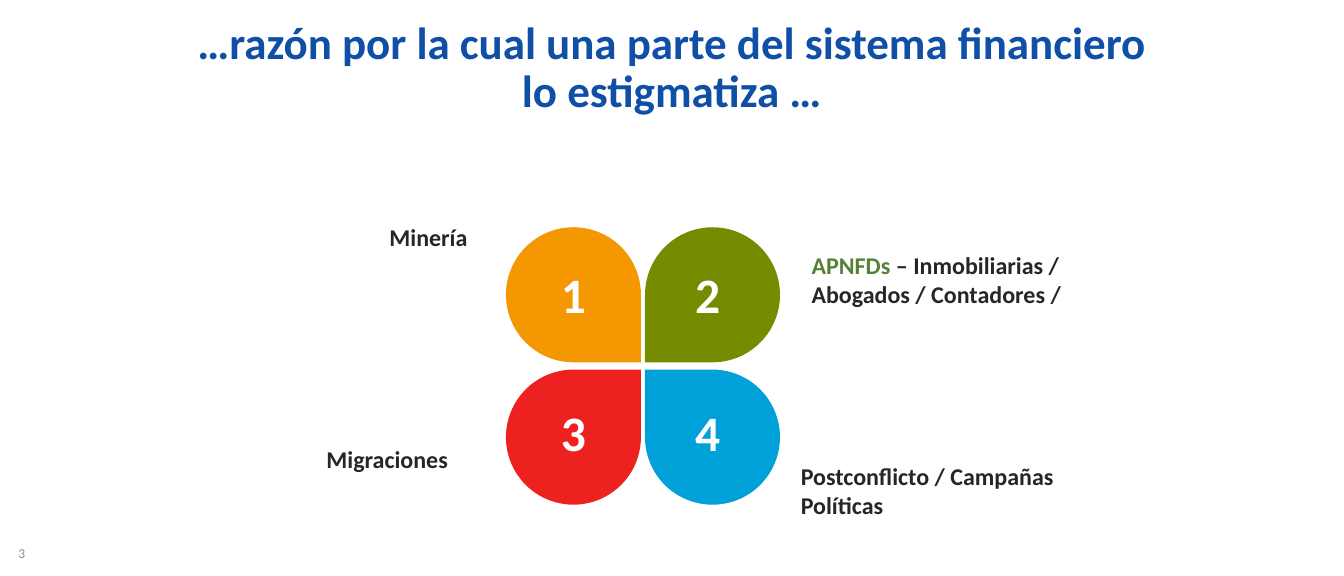
from pptx import Presentation
from pptx.dml.color import RGBColor
from pptx.enum.shapes import MSO_SHAPE as Preset
from pptx.enum.text import MSO_ANCHOR as Anchor, PP_ALIGN as Align
from pptx.util import Pt

BLUE = RGBColor(0x0F, 0x4F, 0xA6)
DARK = RGBColor(0x26, 0x26, 0x26)
GREEN = RGBColor(0x54, 0x82, 0x35)
GRAY = RGBColor(0x8C, 0x8C, 0x8C)
WHITE = RGBColor(0xFF, 0xFF, 0xFF)
ORANGE = RGBColor(0xF5, 0x97, 0x00)
OLIVE = RGBColor(0x75, 0x8B, 0x00)
RED = RGBColor(0xEE, 0x21, 0x21)
SKY = RGBColor(0x00, 0xA1, 0xD8)

TITLE = "…razón por la cual una parte del sistema financiero\nlo estigmatiza …"
PAGE_NUMBER = "3"
PETALS = [("1", ORANGE, 90), ("2", OLIVE, 180), ("3", RED, 0), ("4", SKY, 270)]
LABELS = [
    ([("Minería", DARK)], (493.9, 293, 154.8, 46), Align.CENTER),
    ([("APNFDs ", GREEN), ("– Inmobiliarias / Abogados / Contadores /", DARK)],
     (1075, 329.8, 349.2, 85), Align.LEFT),
    ([("Migraciones", DARK)], (369.4, 589, 293.8, 46), Align.CENTER),
    ([("Postconflicto / Campañas Políticas", DARK)],
     (1060.6, 612, 378, 85), Align.LEFT),
]

PETAL_SIZE = 180
PETAL_LEFTS, PETAL_TOPS = (674.6, 860), (302.8, 492.5)
NUMBER_SIZE = 82
NUMBER_LEFTS, NUMBER_TOPS = (723.6, 902.5), (350.8, 533.8)


def add_text(page, spans, place, size, align=Align.LEFT, bold=True, anchor=Anchor.TOP):
    box = page.shapes.add_textbox(*map(Pt, place))
    frame = box.text_frame
    frame.word_wrap = True
    frame.vertical_anchor = anchor
    para = frame.paragraphs[0]
    para.alignment = align
    para.font.name = "Calibri"
    para.font.size = Pt(size)
    para.font.bold = bold
    if len(spans) == 1:
        para.text, para.font.color.rgb = spans[0]
        for span in para.runs:
            span.font.color.rgb = spans[0][1]
    else:
        for text, color in spans:
            span = para.add_run()
            span.text = text
            span.font.color.rgb = color
    return box


def add_petal(page, index, number, color, rotation):
    row, column = divmod(index, 2)
    petal = page.shapes.add_shape(
        Preset.TEAR, Pt(PETAL_LEFTS[column]), Pt(PETAL_TOPS[row]),
        Pt(PETAL_SIZE), Pt(PETAL_SIZE))
    petal.shadow.inherit = False
    petal.rotation = rotation
    petal.fill.solid()
    petal.fill.fore_color.rgb = color
    petal.line.fill.background()
    place = (NUMBER_LEFTS[column], NUMBER_TOPS[row], NUMBER_SIZE, NUMBER_SIZE)
    add_text(page, [(number, WHITE)], place, 66, Align.CENTER, anchor=Anchor.MIDDLE)


def main():
    deck = Presentation()
    deck.slide_width, deck.slide_height = Pt(1792), Pt(767.5)
    page = deck.slides.add_slide(deck.slide_layouts[6])

    title = add_text(page, [(TITLE, BLUE)], (0.7, 0, 1790, 183.6), 60,
                     Align.CENTER, anchor=Anchor.MIDDLE)
    title.text_frame.paragraphs[0].line_spacing = 0.9
    for index, petal in enumerate(PETALS):
        add_petal(page, index, *petal)
    for spans, place, align in LABELS:
        add_text(page, spans, place, 32, align)
    add_text(page, [(PAGE_NUMBER, GRAY)], (17.3, 710.6, 403, 54), 18,
             bold=False, anchor=Anchor.MIDDLE)

    deck.save("out.pptx")


if __name__ == "__main__":
    main()
